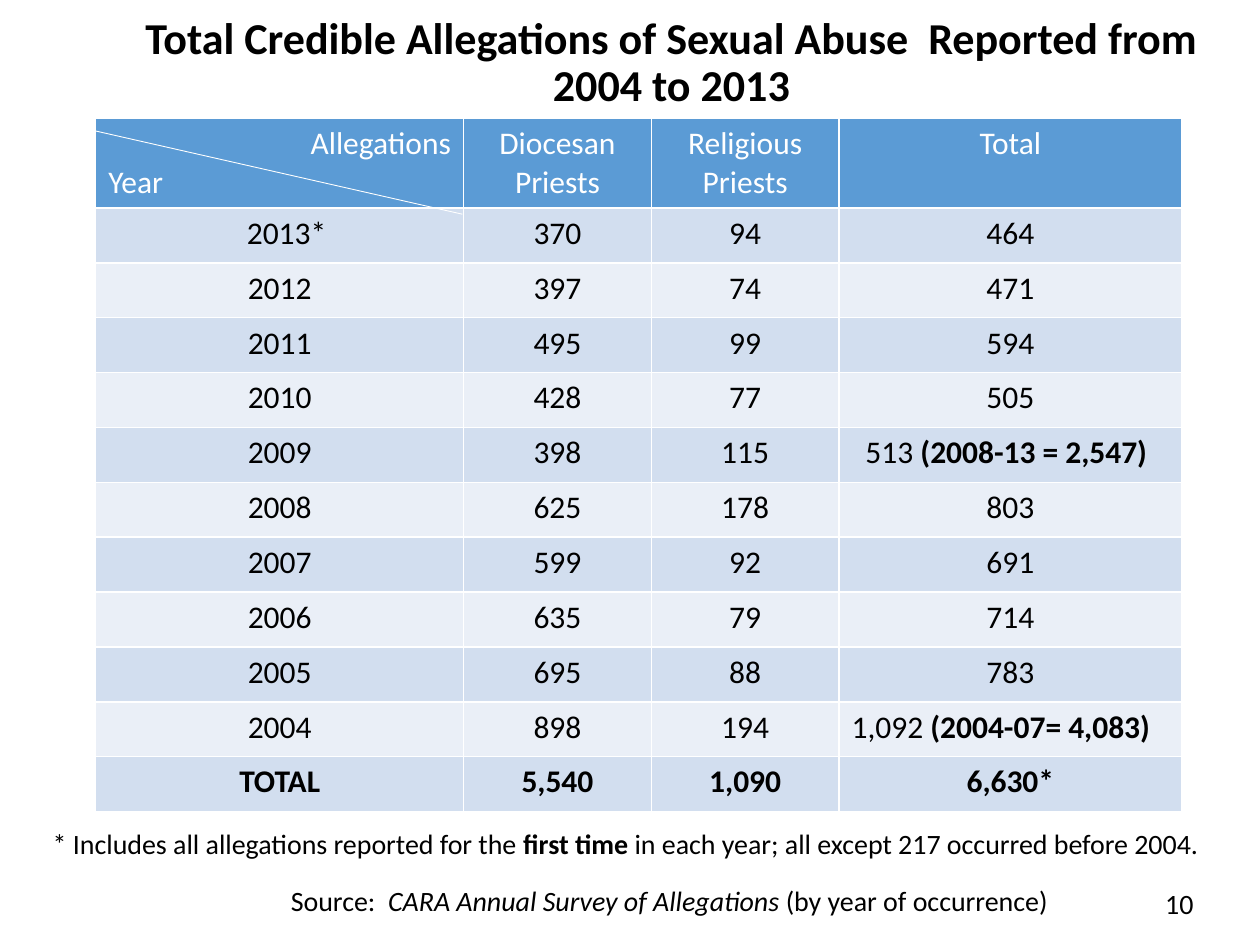
"""Build the slide with the table of credible allegations from 2004 to 2013."""
from lxml.etree import SubElement
from pptx import Presentation
from pptx.dml.color import RGBColor
from pptx.enum.shapes import MSO_CONNECTOR
from pptx.enum.text import MSO_ANCHOR, PP_ALIGN
from pptx.oxml.ns import qn
from pptx.util import Inches, Pt

COLORS = {"text": "000000", "white": "FFFFFF", "header": "5B9BD5",
          "odd": "D2DEEF", "even": "EAEFF7"}


def add_run(p, text, size, color="text", bold=False, italic=False):
    r = p.add_run()
    r.text = text
    r.font.name = "Calibri"
    r.font.size = Pt(size)
    r.font.bold = bold
    r.font.italic = italic
    r.font.color.rgb = RGBColor.from_string(COLORS[color])


def style_cell(cell, fill):
    cell.fill.solid()
    cell.fill.fore_color.rgb = RGBColor.from_string(COLORS[fill])
    tcPr = cell._tc.get_or_add_tcPr()
    for i, side in enumerate(("lnL", "lnR", "lnT", "lnB")):
        ln = tcPr.makeelement(qn(f"a:{side}"), {"w": str(Pt(1))})
        SubElement(SubElement(ln, qn("a:solidFill")), qn("a:srgbClr"), val=COLORS["white"])
        tcPr.insert(i, ln)


prs = Presentation()
prs.slide_width, prs.slide_height = Inches(10), Inches(7.5)
s = prs.slides.add_slide(prs.slide_layouts[5])

title = s.shapes.title
title.left, title.top, title.width, title.height = map(Inches, (0.93, 0.12, 8.8, 0.77))
tf = title.text_frame
tf.word_wrap = True
tf.vertical_anchor = MSO_ANCHOR.MIDDLE
p = tf.paragraphs[0]
p.alignment = PP_ALIGN.CENTER
p.line_spacing = 0.9
add_run(p, "Total Credible Allegations of Sexual Abuse  Reported from 2004 to 2013", 25.2, bold=True)

headers = [["Allegations", "Year"], ["Diocesan", "Priests"], ["Religious", "Priests"], ["Total"]]
rows = [
    ("2013*", "370", "94", "464"),
    ("2012", "397", "74", "471"),
    ("2011", "495", "99", "594"),
    ("2010", "428", "77", "505"),
    ("2009", "398", "115", "513 ", "(2008-13 = 2,547)"),
    ("2008", "625", "178", "803"),
    ("2007", "599", "92", "691"),
    ("2006", "635", "79", "714"),
    ("2005", "695", "88", "783"),
    ("2004", "898", "194", "1,092 ", "(2004-07= 4,083)"),
    ("TOTAL", "5,540", "1,090", "6,630*"),
]
header_height, table_height = 0.7, 5.49
table = s.shapes.add_table(len(rows) + 1, len(headers), Inches(0.76), Inches(0.94),
                           Inches(8.62), Inches(table_height)).table
for col, width in zip(table.columns, (2.92, 1.49, 1.49, 2.72)):
    col.width = Inches(width)
for row in table.rows:
    row.height = Inches((table_height - header_height) / len(rows))
table.rows[0].height = Inches(header_height)

for c, lines in enumerate(headers):
    cell = table.cell(0, c)
    style_cell(cell, "header")
    tf = cell.text_frame
    for i, line in enumerate(lines):
        p = tf.add_paragraph() if i else tf.paragraphs[0]
        p.alignment = PP_ALIGN.CENTER
        add_run(p, line, 18, "white")
corner = table.cell(0, 0).text_frame.paragraphs
corner[0].alignment, corner[1].alignment = PP_ALIGN.RIGHT, PP_ALIGN.LEFT

for i, (*values, total) in enumerate((r[:3] + (r[3:],) for r in rows), 1):
    for c, parts in enumerate([(v,) for v in values] + [total]):
        cell = table.cell(i, c)
        style_cell(cell, "odd" if i % 2 else "even")
        p = cell.text_frame.paragraphs[0]
        p.alignment = PP_ALIGN.LEFT if len(parts) > 1 else PP_ALIGN.CENTER
        if parts[0] in ("2013*", "513 "):
            cell.margin_left = Inches(0.21)
        for k, part in enumerate(parts):
            add_run(p, part, 18, bold=k > 0 or i == len(rows))

line = s.shapes.add_connector(MSO_CONNECTOR.STRAIGHT, Inches(0.76), Inches(1.04),
                              Inches(3.67), Inches(1.7))
line.line.color.rgb = RGBColor.from_string(COLORS["white"])
line.line.width = Pt(0.5)
SubElement(line._element.spPr, qn("a:effectLst"))

notes = [
    ((2.21, 6.96, 7.23, 0.37), PP_ALIGN.LEFT, MSO_ANCHOR.TOP,
     [("Source:  ", {}), ("CARA Annual Survey of Allegations ", {"italic": True}),
      ("(by year of occurrence)", {})]),
    ((0.32, 6.51, 9.48, 0.37), PP_ALIGN.LEFT, MSO_ANCHOR.TOP,
     [("* Includes all allegations reported for the ", {}), ("first time ", {"bold": True}),
      ("in each year; all except 217 occurred before 2004.", {})]),
    ((7.32, 6.97, 2.25, 0.4), PP_ALIGN.RIGHT, MSO_ANCHOR.MIDDLE, [("10", {})]),
]
for box, align, anchor, runs in notes:
    tf = s.shapes.add_textbox(*map(Inches, box)).text_frame
    tf.word_wrap = True
    tf.vertical_anchor = anchor
    p = tf.paragraphs[0]
    p.alignment = align
    for text, style in runs:
        add_run(p, text, 16, **style)

prs.save("out.pptx")
